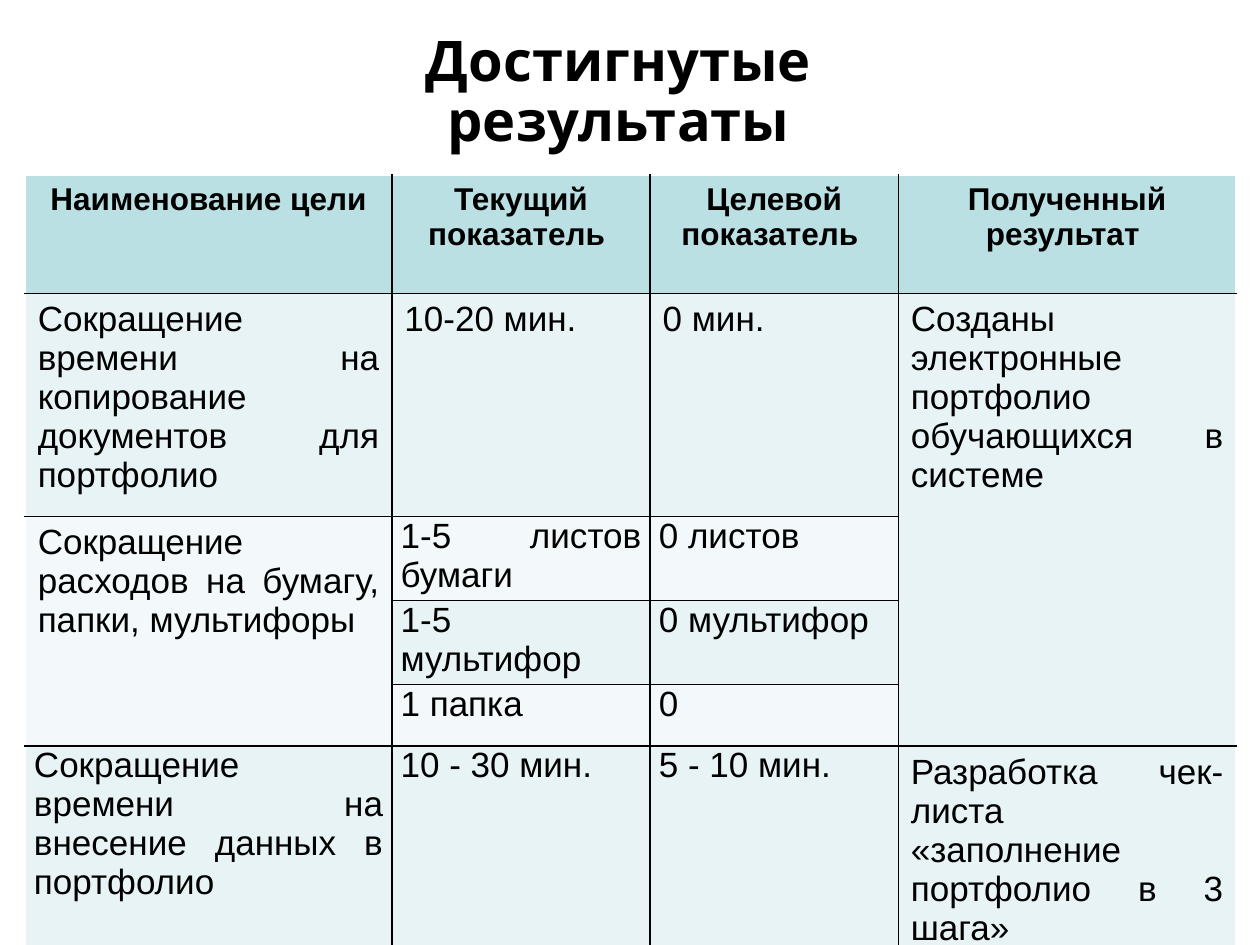
from typing import NamedTuple

from lxml import etree
from pptx import Presentation
from pptx.dml.color import RGBColor
from pptx.enum import text as t
from pptx.oxml import ns
from pptx.util import Inches, Pt

HUES = {"ink": "000000", "edge": "FFFFFF", "head": "BBE0E3",
        "mint": "E7F3F4", "pale": "F3F9FA"}
COLS = [2.91, 2.05, 1.97, 2.68]
ROWS = [0.94, 0.99, 0.61, 0.49, 0.49, 0.49]


class Cell(NamedTuple):
    text: str
    fill: str = "mint"
    tight: bool = False
    span: int = 1


def tight(text: str, fill: str = "mint") -> Cell:
    return Cell(text, fill, True)


# Table content; None is covered by the merged cell above
GRID = [
    [Cell(name, "head") for name in (
        "Наименование цели", "Текущий показатель ",
        "Целевой показатель ", "Полученный результат ")],
    [Cell("Сокращение времени на копирование документов для портфолио"),
     Cell("10-20 мин."), Cell("0 мин."),
     Cell("Созданы электронные портфолио обучающихся в системе", span=4)],
    [Cell("Сокращение расходов на бумагу, папки, мультифоры", "pale", span=3),
     tight("1-5 листов бумаги", "pale"), tight("0 листов", "pale"), None],
    [None, tight("1-5 мультифор"), tight("0 мультифор"), None],
    [None, tight("1 папка", "pale"), tight("0", "pale"), None],
    [tight("Сокращение времени на внесение данных в портфолио"),
     tight("10 - 30 мин."), tight("5 - 10 мин."),
     Cell("Разработка чек-листа «заполнение портфолио в 3 шага»")],
]


def write(frame, text: str, *, size: int, font: str = "Arial",
          bold: bool = False, align=t.PP_ALIGN.CENTER, lead=None) -> None:
    para = frame.paragraphs[0]
    para.alignment = align
    if lead:
        para.line_spacing = lead
    run = para.add_run()
    run.text = text
    run.font.size, run.font.name, run.font.bold = Pt(size), font, bold
    run.font.color.rgb = RGBColor.from_string(HUES["ink"])


def rule(cell, row: int, col: int) -> None:
    """Black inner lines, white outer ones except at the bottom."""
    sides = {"lnL": col == 0, "lnR": col == len(COLS) - 1,
             "lnT": row == 0, "lnB": False}
    props = cell._tc.get_or_add_tcPr()
    for spot, (tag, outer) in enumerate(sides.items()):
        line = etree.Element(ns.qn("a:" + tag), w=str(Pt(1)))
        fill = etree.SubElement(line, ns.qn("a:solidFill"))
        etree.SubElement(fill, ns.qn("a:srgbClr"),
                         val=HUES["edge" if outer else "ink"])
        props.insert(spot, line)


def draw(table, row: int, col: int, item: Cell) -> None:
    cell = table.cell(row, col)
    if item.span > 1:
        cell.merge(table.cell(row + item.span - 1, col))
    if item.tight:
        cell.margin_left = cell.margin_right = Inches(0.07)
        cell.margin_top = cell.margin_bottom = 0
    cell.fill.solid()
    cell.fill.fore_color.rgb = RGBColor.from_string(HUES[item.fill])
    head = row == 0
    write(cell.text_frame, item.text, size=18 if head else 20, bold=head,
          align=t.PP_ALIGN.CENTER if head else t.PP_ALIGN.JUSTIFY)


def main() -> None:
    deck = Presentation()
    deck.slide_width, deck.slide_height = Inches(10), Inches(7.5)
    slide = deck.slides.add_slide(deck.slide_layouts[6])

    # Title
    box = slide.shapes.add_textbox(Inches(2.01), Inches(0.21),
                                   Inches(5.8), Inches(0.64))
    box.text_frame.word_wrap = True
    write(box.text_frame, "Достигнутые результаты", size=32,
          font="Quicksand", bold=True, lead=0.9)

    # Results table
    table = slide.shapes.add_table(
        len(ROWS), len(COLS), Inches(0.2), Inches(1.39),
        Inches(sum(COLS)), Inches(5.97)).table
    table.first_row = table.horz_banding = False
    for col, width in zip(table.columns, COLS):
        col.width = Inches(width)
    for row, height in zip(table.rows, ROWS):
        row.height = Inches(height)
    for r, line in enumerate(GRID):
        for c, item in enumerate(line):
            if item:
                draw(table, r, c, item)
            rule(table.cell(r, c), r, c)

    deck.save("out.pptx")


if __name__ == "__main__":
    main()
